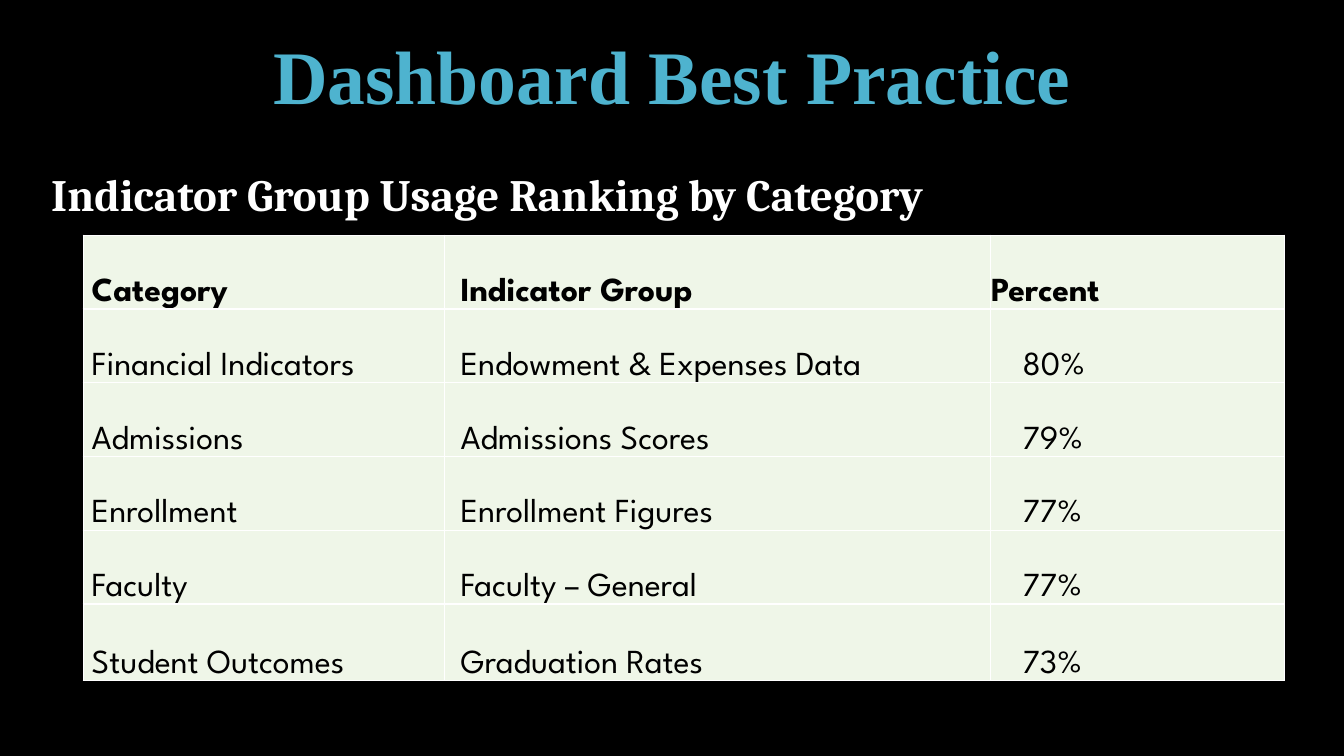
"""Build the dashboard best practice slide with its ranking table."""
from dataclasses import dataclass

from lxml import etree
from pptx import Presentation
from pptx import util as u
from pptx.dml.color import RGBColor
from pptx.enum import text
from pptx.oxml import ns

BLACK, WHITE, TEAL, PALE = "000000", "FFFFFF", "4EB3CF", "EFF6E8"


@dataclass
class Style:
    font: str
    size: float
    color: str
    bold: bool = True


@dataclass
class Column:
    width: float
    head_inset: float
    inset: float


HEAD = Style("Times New Roman", 54, TEAL)
SUB = Style("Cambria", 32, WHITE)
LABEL = Style("League Spartan", 24, BLACK)
VALUE = Style("League Spartan", 24, BLACK, False)

COLUMNS = [Column(258, 6, 6), Column(390, 11.5, 11.5), Column(210, 0.5, 23)]
HEIGHTS = [52.7] * 5 + [54.7]
ROWS = [
    ("Category", "Indicator Group", "Percent"),
    ("Financial Indicators", "Endowment & Expenses Data", "80%"),
    ("Admissions", "Admissions Scores", "79%"),
    ("Enrollment", "Enrollment Figures", "77%"),
    ("Faculty", "Faculty – General", "77%"),
    ("Student Outcomes", "Graduation Rates", "73%"),
]


def paint(target, color: str) -> None:
    target.solid()
    target.fore_color.rgb = RGBColor.from_string(color)


def write(frame, words: str, style: Style) -> None:
    frame.text = words
    for run in frame.paragraphs[0].runs:
        run.font.name = style.font
        run.font.size = u.Pt(style.size)
        run.font.bold = style.bold
        paint(run.font.fill, style.color)


def place(shape, left: float, top: float, width: float, height: float) -> None:
    shape.left, shape.top = u.Pt(left), u.Pt(top)
    shape.width, shape.height = u.Pt(width), u.Pt(height)


def border(cell, color: str, width: float) -> None:
    props = cell._tc.get_or_add_tcPr()
    for side in ("lnL", "lnR", "lnT", "lnB"):
        line = etree.SubElement(props, ns.qn(f"a:{side}"), w=str(u.Pt(width)))
        fill = etree.SubElement(line, ns.qn("a:solidFill"))
        etree.SubElement(fill, ns.qn("a:srgbClr"), val=color)


def draw_cell(cell, words: str, style: Style, inset: float) -> None:
    border(cell, WHITE, 1)
    paint(cell.fill, PALE)
    cell.vertical_anchor = text.MSO_ANCHOR.BOTTOM
    cell.margin_left = u.Pt(inset)
    cell.margin_top = cell.margin_right = u.Pt(0.5)
    cell.margin_bottom = u.Pt(0)
    write(cell.text_frame, words, style)


def draw_table(slide) -> None:
    width = sum(col.width for col in COLUMNS)
    frame = slide.shapes.add_table(
        len(ROWS), len(COLUMNS), u.Pt(59.5), u.Pt(168), u.Pt(width), u.Pt(sum(HEIGHTS)))
    table = frame.table
    for slot, col in zip(table.columns, COLUMNS):
        slot.width = u.Pt(col.width)
    for r, (words, height) in enumerate(zip(ROWS, HEIGHTS)):
        table.rows[r].height = u.Pt(height)
        for c, (word, col) in enumerate(zip(words, COLUMNS)):
            style, inset = (VALUE, col.inset) if r else (LABEL, col.head_inset)
            draw_cell(table.cell(r, c), word, style, inset)


def draw_title(slide) -> None:
    title = slide.shapes.title
    place(title, 0, 0, 960, 90)
    frame = title.text_frame
    write(frame, "Dashboard Best Practice", HEAD)
    frame.auto_size = text.MSO_AUTO_SIZE.NONE
    frame.vertical_anchor = text.MSO_ANCHOR.BOTTOM
    frame.paragraphs[0].alignment = text.PP_ALIGN.CENTER
    frame.paragraphs[0].line_spacing = 0.9


def draw_heading(slide) -> None:
    box = slide.shapes.add_textbox(u.Pt(29.5), u.Pt(120), u.Pt(929.5), u.Pt(54))
    frame = box.text_frame
    frame.word_wrap = True
    write(frame, "Indicator Group Usage Ranking by Category", SUB)
    frame.paragraphs[0].line_spacing = 0.9


def main() -> None:
    deck = Presentation()
    deck.slide_width, deck.slide_height = u.Pt(960), u.Pt(540)
    slide = deck.slides.add_slide(deck.slide_layouts[5])
    paint(slide.background.fill, BLACK)
    draw_title(slide)
    draw_heading(slide)
    draw_table(slide)
    deck.save("out.pptx")


if __name__ == "__main__":
    main()
